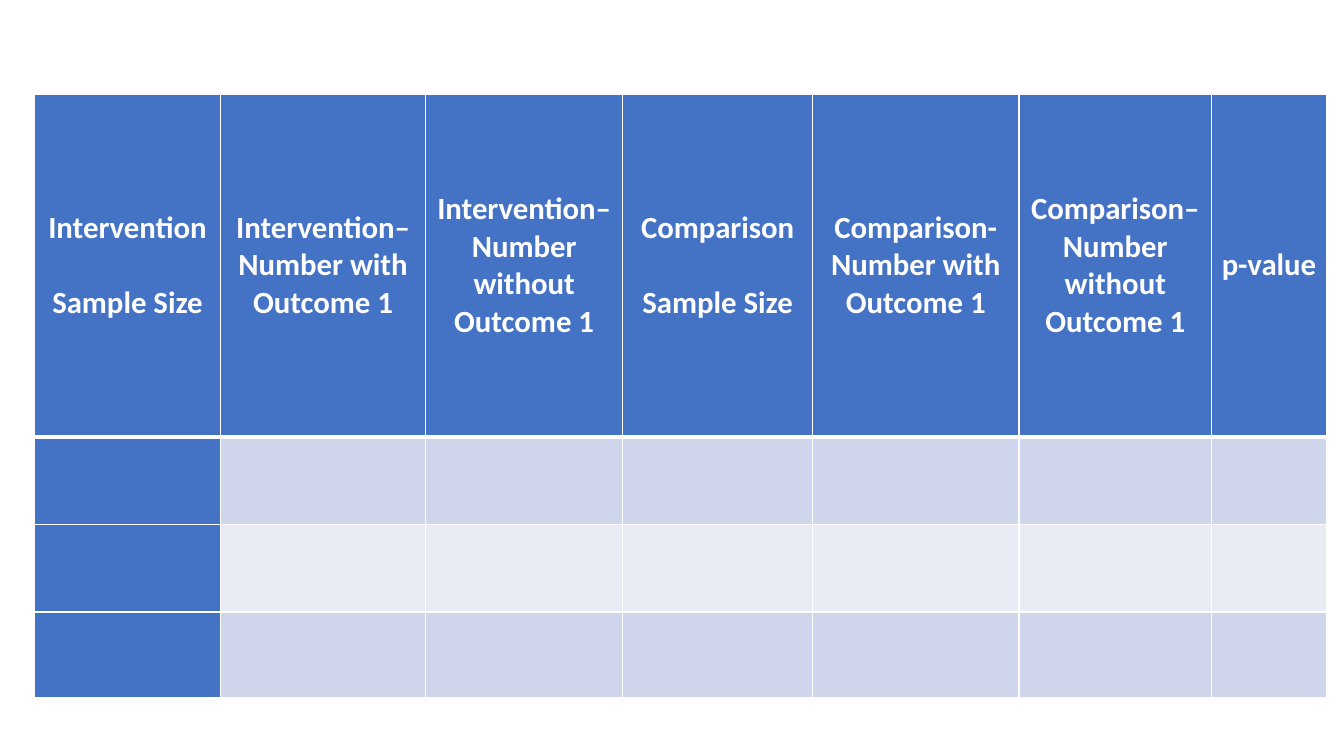
from dataclasses import dataclass

from lxml.etree import SubElement
from pptx import Presentation
from pptx.dml.color import RGBColor
from pptx.enum.text import MSO_ANCHOR, PP_ALIGN
from pptx.oxml.ns import qn
from pptx.util import Pt


@dataclass(frozen=True)
class Theme:
    font: str = "Calibri"
    header_size: float = 22
    paragraph_gap: float = 26.8
    white: str = "FFFFFF"
    blue: str = "4472C4"
    bands: tuple = ("CFD5EA", "E9EBF5")
    thin_line: float = 1
    thick_line: float = 3
    cell_margin: float = 5


# Each header is a list of paragraphs and the gap between them
HEADERS = [
    (["Intervention", "Sample Size"], True),
    (["Intervention– Number with Outcome 1"], False),
    (["Intervention– Number without Outcome 1"], False),
    (["Comparison", "Sample Size"], True),
    (["Comparison-", "Number with Outcome 1"], False),
    (["Comparison– Number without Outcome 1"], False),
    (["p-value"], False),
]
COLUMN_WIDTHS = [133.2, 146.2, 141.1, 135.4, 147.6, 137.5, 82.1]
ROW_HEIGHTS = [244.8, 62.6, 62.6, 61.2]


def write_text(para, text, *, font, size, color, bold=False,
               align=PP_ALIGN.CENTER, space_before=0):
    para.alignment = align
    para.space_before = Pt(space_before)
    span = para.add_run()
    span.text = text
    span.font.name = font
    span.font.size = Pt(size)
    span.font.bold = bold
    span.font.color.rgb = RGBColor.from_string(color)


class SlideBuilder:
    def __init__(self, slide, theme):
        self.slide = slide
        self.theme = theme

    def add_table(self, left, top, widths, heights):
        frame = self.slide.shapes.add_table(
            len(heights), len(widths), Pt(left), Pt(top),
            Pt(sum(widths)), Pt(sum(heights)))
        table = frame.table
        for column, width in zip(table.columns, widths):
            column.width = Pt(width)
        for row, height in zip(table.rows, heights):
            row.height = Pt(height)
        return table

    def style_cell(self, cell, fill, top_line, bottom_line):
        thin = self.theme.thin_line
        properties = cell._tc.get_or_add_tcPr()
        edges = {"lnL": thin, "lnR": thin, "lnT": top_line, "lnB": bottom_line}
        for edge, width in edges.items():
            line = SubElement(properties, qn(f"a:{edge}"), w=str(Pt(width)))
            paint = SubElement(line, qn("a:solidFill"))
            SubElement(paint, qn("a:srgbClr"), val=self.theme.white)
        cell.fill.solid()
        cell.fill.fore_color.rgb = RGBColor.from_string(fill)

    def fill_header(self, cell, paragraphs, spaced):
        theme = self.theme
        cell.vertical_anchor = MSO_ANCHOR.MIDDLE
        cell.margin_left = cell.margin_right = Pt(theme.cell_margin)
        cell.margin_top = cell.margin_bottom = Pt(0)
        frame = cell.text_frame
        for index, text in enumerate(paragraphs):
            para = frame.add_paragraph() if index else frame.paragraphs[0]
            write_text(para, text, font=theme.font, size=theme.header_size,
                       color=theme.white, bold=True,
                       space_before=theme.paragraph_gap if index and spaced else 0)


def main():
    deck = Presentation()
    deck.slide_width, deck.slide_height = Pt(960), Pt(540)
    theme = Theme()
    # Blank layout: the slide has no title
    builder = SlideBuilder(deck.slides.add_slide(deck.slide_layouts[6]), theme)
    table = builder.add_table(24.5, 67.2, COLUMN_WIDTHS, ROW_HEIGHTS)

    # Fills and borders: blue header row and first column, banded body
    for row in range(len(ROW_HEIGHTS)):
        for column in range(len(COLUMN_WIDTHS)):
            is_blue = row == 0 or column == 0
            builder.style_cell(
                table.cell(row, column),
                theme.blue if is_blue else theme.bands[(row - 1) % 2],
                theme.thick_line if row == 1 else theme.thin_line,
                theme.thick_line if row == 0 else theme.thin_line)

    # Header wording
    for column, (paragraphs, spaced) in enumerate(HEADERS):
        builder.fill_header(table.cell(0, column), paragraphs, spaced)

    deck.save("out.pptx")


if __name__ == "__main__":
    main()
